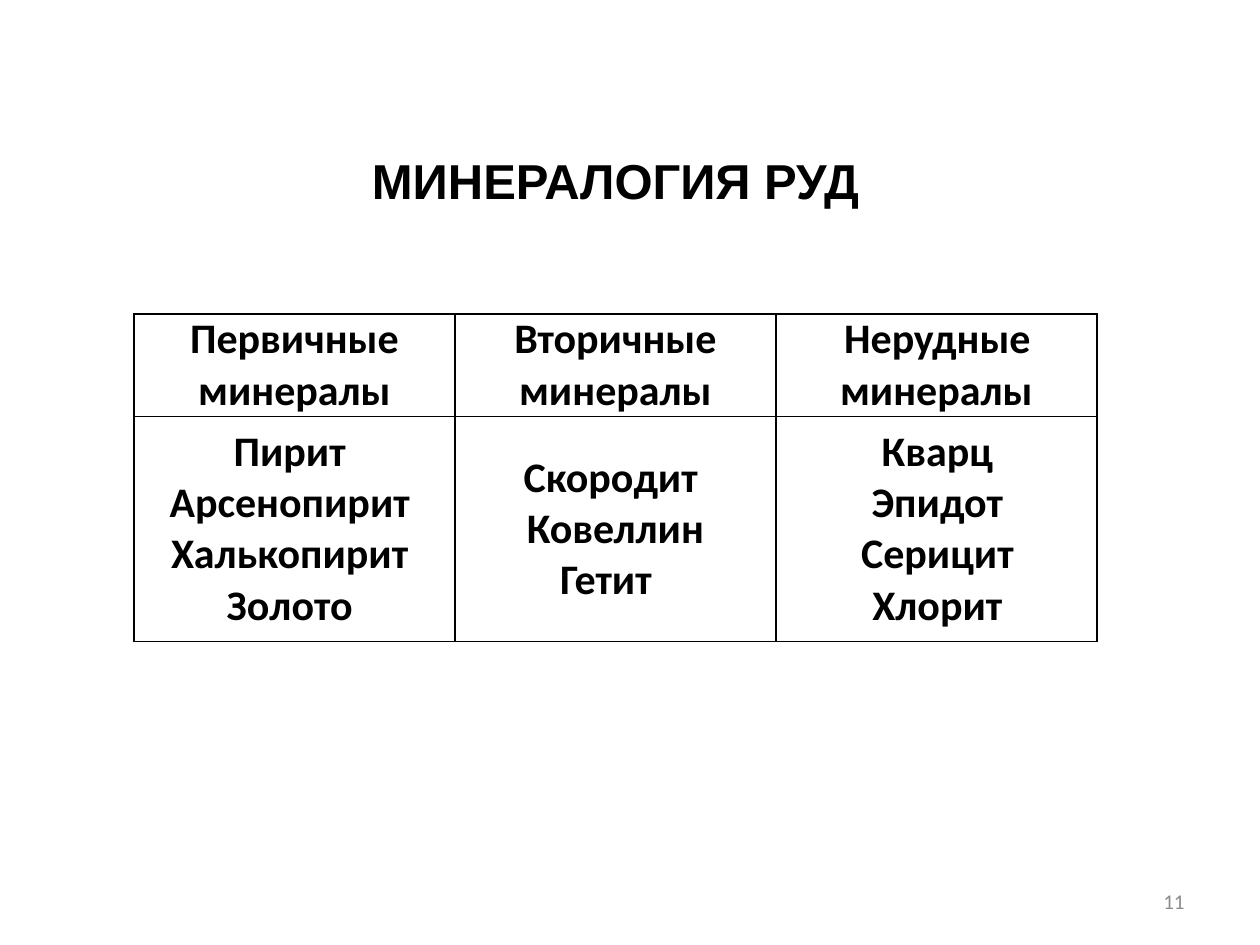
"""Build the ore mineralogy slide with its table of minerals."""
from dataclasses import dataclass

from lxml import etree
from pptx import Presentation
from pptx import util as u
from pptx.dml.color import RGBColor
from pptx.enum import text
from pptx.oxml import ns

PX_PER_INCH = 126
BLACK = RGBColor(0x00, 0x00, 0x00)
GREY = RGBColor(0x8C, 0x8C, 0x8C)
HEADER_HEIGHT, BODY_HEIGHT = 102, 225
COLUMN_WIDTH = 321


@dataclass(frozen=True)
class Style:
    font: str
    size: int
    color: RGBColor
    bold: bool
    align: text.PP_ALIGN


@dataclass(frozen=True)
class MineralGroup:
    heading: str
    minerals: tuple[str, ...]
    indent: int = 0


TITLE = Style("Arial", 28, BLACK, True, text.PP_ALIGN.CENTER)
CELL = Style("Calibri", 24, BLACK, True, text.PP_ALIGN.CENTER)
NUMBER = Style("Calibri", 12, GREY, False, text.PP_ALIGN.RIGHT)

GROUPS = (
    MineralGroup("Первичные минералы",
                 ("Пирит ", "Арсенопирит ", "Халькопирит ", "Золото ")),
    MineralGroup("Вторичные минералы", ("Скородит ", "Ковеллин", "Гетит  ")),
    MineralGroup("Нерудные минералы",
                 ("Кварц", "Эпидот", "Серицит", "Хлорит"), indent=2),
)


def px(length: int) -> u.Emu:
    return u.Emu(round(length * 914400 / PX_PER_INCH))


def write(frame, lines: tuple[str, ...], style: Style, indent: int = 0) -> None:
    frame.word_wrap = True
    frame.vertical_anchor = text.MSO_ANCHOR.MIDDLE
    for index, line in enumerate(lines):
        paragraph = frame.add_paragraph() if index else frame.paragraphs[0]
        paragraph.alignment = style.align
        if indent:
            paragraph._p.get_or_add_pPr().set("indent", str(px(indent)))
        run = paragraph.add_run()
        run.text = line
        run.font.name = style.font
        run.font.size = u.Pt(style.size)
        run.font.bold = style.bold
        run.font.color.rgb = style.color


def add_borders(cell, color: RGBColor, width: u.Pt) -> None:
    properties = cell._tc.get_or_add_tcPr()
    for side in ("lnL", "lnR", "lnT", "lnB"):
        line = etree.SubElement(properties, ns.qn(f"a:{side}"), w=str(width))
        fill = etree.SubElement(line, ns.qn("a:solidFill"))
        etree.SubElement(fill, ns.qn("a:srgbClr"), val=str(color))


def fill_cell(cell, lines: tuple[str, ...], indent: int) -> None:
    cell.margin_left = cell.margin_right = px(9)
    cell.margin_top = cell.margin_bottom = 0
    add_borders(cell, BLACK, u.Pt(1))
    cell.fill.background()
    write(cell.text_frame, lines, CELL, indent)
    cell.vertical_anchor = text.MSO_ANCHOR.MIDDLE


def add_mineral_table(slide, groups: tuple[MineralGroup, ...]) -> None:
    table = slide.shapes.add_table(
        2, len(groups), px(134), px(314),
        px(COLUMN_WIDTH * len(groups)), px(HEADER_HEIGHT + BODY_HEIGHT)).table
    table.first_row = table.horz_banding = False
    table.rows[0].height = px(HEADER_HEIGHT)
    table.rows[1].height = px(BODY_HEIGHT)
    for column, group in enumerate(groups):
        table.columns[column].width = px(COLUMN_WIDTH)
        fill_cell(table.cell(0, column), (group.heading,), group.indent)
        fill_cell(table.cell(1, column), group.minerals, group.indent)


def main() -> None:
    presentation = Presentation()
    presentation.slide_width, presentation.slide_height = px(1260), px(945)
    slide = presentation.slides.add_slide(presentation.slide_layouts[5])

    title = slide.shapes.title
    title.left, title.top = px(282), px(125)
    title.width, title.height = px(667), px(110)
    write(title.text_frame, ("МИНЕРАЛОГИЯ РУД",), TITLE)

    add_mineral_table(slide, GROUPS)

    number = slide.shapes.add_textbox(px(903), px(876), px(294), px(50))
    write(number.text_frame, ("11",), NUMBER)

    presentation.save("out.pptx")


if __name__ == "__main__":
    main()
